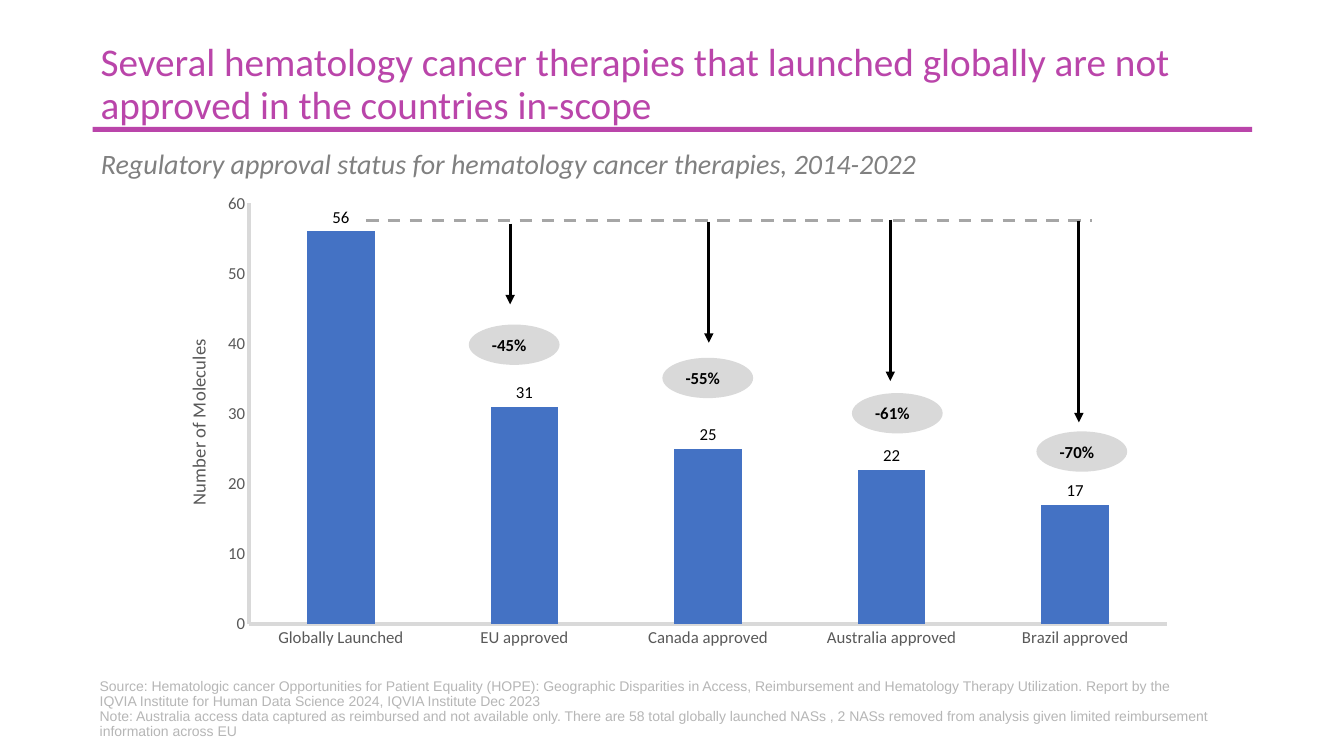
from dataclasses import dataclass

from lxml.etree import SubElement
from pptx import Presentation
from pptx.chart.data import CategoryChartData
from pptx.dml.color import RGBColor
from pptx.enum.chart import XL_CHART_TYPE, XL_LABEL_POSITION, XL_TICK_MARK
from pptx.enum.dml import MSO_LINE
from pptx.enum.shapes import MSO_CONNECTOR, MSO_SHAPE
from pptx.enum.text import MSO_ANCHOR, PP_ALIGN
from pptx.oxml import parse_xml
from pptx.oxml.ns import nsdecls, qn
from pptx.util import Inches, Pt


@dataclass(frozen=True)
class Theme:
    accent: str = "BA45AA"
    subtitle: str = "808080"
    footnote: str = "B6B6B6"
    bar: str = "4472C4"
    axis_text: str = "595959"
    pale: str = "D9D9D9"
    dash: str = "A6A6A6"
    ink: str = "000000"
    body_font: str = "Calibri"
    note_font: str = "Arial"
    heading_size: float = 28
    subtitle_size: float = 20
    axis_title_size: float = 13.3
    label_size: float = 12
    note_size: float = 10


THEME = Theme()

HEADING = ("Several hematology cancer therapies that launched globally are not "
           "approved in the countries in-scope")
SUBTITLE = "Regulatory approval status for hematology cancer therapies, 2014-2022"
NOTES = [
    "Source: Hematologic cancer Opportunities for Patient Equality (HOPE): Geographic "
    "Disparities in Access, Reimbursement and Hematology Therapy Utilization. Report by "
    "the IQVIA Institute for Human Data Science 2024, IQVIA Institute Dec 2023",
    "Note: Australia access data captured as reimbursed and not available only. There are "
    "58 total globally launched NASs , 2 NASs removed from analysis given limited "
    "reimbursement information across EU",
]
APPROVALS = {"Globally Launched": 56, "EU approved": 31, "Canada approved": 25,
             "Australia approved": 22, "Brazil approved": 17}
# Per country: change, arrow x, arrow top, arrow length, oval left, oval top (within the chart)
DROPS = [("-45%", 3.51, 0.39, 0.8, 3.1, 1.39),
         ("-55%", 5.48, 0.37, 1.2, 5.02, 1.72),
         ("-61%", 7.28, 0.35, 1.6, 6.9, 2.07),
         ("-70%", 9.15, 0.36, 2.0, 8.73, 2.45)]


def color(code):
    return RGBColor.from_string(code)


def style_font(font, size, code, name=THEME.body_font, bold=False, italic=False):
    font.size, font.name = Pt(size), name
    font.bold, font.italic = bold, italic
    font.color.rgb = color(code)


def write_text(shape, lines, size, code, anchor=MSO_ANCHOR.MIDDLE, spacing=0.9, **style):
    frame = shape.text_frame
    frame.word_wrap = True
    frame.vertical_anchor = anchor
    for index, line in enumerate(lines):
        para = frame.paragraphs[0] if index == 0 else frame.add_paragraph()
        para.alignment = PP_ALIGN.LEFT
        para.line_spacing = spacing
        span = para.add_run()
        span.text = line
        style_font(span.font, size, code, **style)
    return frame


def add_filled(page, kind, code, left, top, width, height):
    shape = page.shapes.add_shape(kind, Inches(left), Inches(top), Inches(width), Inches(height))
    shape.shadow.inherit = False
    shape.fill.solid()
    shape.fill.fore_color.rgb = color(code)
    shape.line.fill.background()
    return shape


def add_line(page, start, end, code, dashed=False, arrow=False):
    line = page.shapes.add_connector(MSO_CONNECTOR.STRAIGHT, *map(Inches, start + end))
    line.line.width = Pt(2.25)
    line.line.color.rgb = color(code)
    if dashed:
        line.line.dash_style = MSO_LINE.DASH
    if arrow:
        SubElement(line.line._get_or_add_ln(), qn("a:tailEnd"), type="triangle")
    SubElement(line._element.spPr, qn("a:effectLst"))


def add_header(page, left, top, width):
    add_filled(page, MSO_SHAPE.RECTANGLE, THEME.accent, left + 0.02, top + 0.9, width, 0.05)
    subtitle = page.shapes.title
    subtitle.left, subtitle.top = Inches(left), Inches(top + 1.03)
    subtitle.width, subtitle.height = Inches(width), Inches(0.5)
    write_text(subtitle, [SUBTITLE], THEME.subtitle_size, THEME.subtitle, italic=True)
    heading = page.shapes.add_textbox(Inches(left), Inches(top), Inches(width), Inches(0.97))
    write_text(heading, [HEADING], THEME.heading_size, THEME.accent)


def add_notes(page, left, top, width, height):
    box = page.shapes.add_textbox(Inches(left), Inches(top), Inches(width), Inches(height))
    frame = write_text(box, NOTES, THEME.note_size, THEME.footnote,
                       anchor=MSO_ANCHOR.BOTTOM, name=THEME.note_font)
    frame.margin_bottom = 0


def chart_layout(inner=False, **fractions):
    """Build a manual chart layout from x, y, w and h fractions."""
    target = '<c:layoutTarget val="inner"/>' if inner else ""
    modes = '<c:xMode val="edge"/><c:yMode val="edge"/>'
    sizes = "".join(f'<c:{key} val="{value}"/>' for key, value in fractions.items())
    return parse_xml(f'<c:layout {nsdecls("c")}><c:manualLayout>{target}{modes}{sizes}'
                     '</c:manualLayout></c:layout>')


def place(element, layout, index):
    for old in element.findall(qn("c:layout")):
        element.remove(old)
    element.insert(index, layout)


def style_axis(axis):
    axis.major_tick_mark = axis.minor_tick_mark = XL_TICK_MARK.NONE
    axis.has_major_gridlines = False
    axis.format.line.width = Pt(3)
    axis.format.line.color.rgb = color(THEME.pale)
    style_font(axis.tick_labels.font, THEME.label_size, THEME.axis_text)


def add_approval_chart(page, left, top, width, height):
    data = CategoryChartData()
    data.categories = list(APPROVALS)
    data.add_series("Series 1", list(APPROVALS.values()))
    chart = page.shapes.add_chart(XL_CHART_TYPE.COLUMN_CLUSTERED, Inches(left), Inches(top),
                                  Inches(width), Inches(height), data).chart
    chart.has_legend = chart.has_title = False
    style_font(chart.font, THEME.note_size, THEME.ink)
    style_axis(chart.category_axis)
    values = chart.value_axis
    style_axis(values)
    values.minimum_scale, values.maximum_scale, values.major_unit = 0, 60, 10
    para = values.axis_title.text_frame.paragraphs[0]
    span = para.add_run()
    span.text = "Number of Molecules"
    style_font(span.font, THEME.axis_title_size, THEME.axis_text)
    place(values.axis_title._element, chart_layout(x=0.025, y=0.32), 1)

    plot = chart.plots[0]
    plot.gap_width, plot.overlap = 171, -27
    plot.vary_by_categories = False
    bars = plot.series[0]
    bars.format.fill.solid()
    bars.format.fill.fore_color.rgb = color(THEME.bar)
    labels = bars.data_labels
    labels.show_value = True
    labels.position = XL_LABEL_POSITION.OUTSIDE_END
    style_font(labels.font, THEME.label_size, THEME.ink)
    place(chart._chartSpace.chart.plotArea,
          chart_layout(inner=True, x=0.09, y=0.04, w=0.89, h=0.89), 0)


def add_drops(page, left, top):
    """Mark the fall from the global level to each country."""
    level = top + 0.36
    add_line(page, (left + 2.08, level), (left + 9.28, level), THEME.dash, dashed=True)
    for change, arrow_x, arrow_top, length, oval_left, oval_top in DROPS:
        x, y = left + arrow_x, top + arrow_top
        add_line(page, (x, y), (x, y + length), THEME.ink, arrow=True)
        oval = add_filled(page, MSO_SHAPE.OVAL, THEME.pale,
                          left + oval_left, top + oval_top, 0.9, 0.4)
        write_text(oval, [change], THEME.label_size, THEME.ink, spacing=1.0, bold=True)


def main():
    deck = Presentation()
    deck.slide_width, deck.slide_height = Inches(13.33), Inches(7.5)
    page = deck.slides.add_slide(deck.slide_layouts[5])
    add_header(page, 0.9, 0.36, 11.5)
    add_notes(page, 0.89, 6.68, 11.19, 0.66)
    add_approval_chart(page, 1.55, 1.83, 10.23, 4.69)
    add_drops(page, 1.55, 1.83)
    deck.save("out.pptx")


if __name__ == "__main__":
    main()
